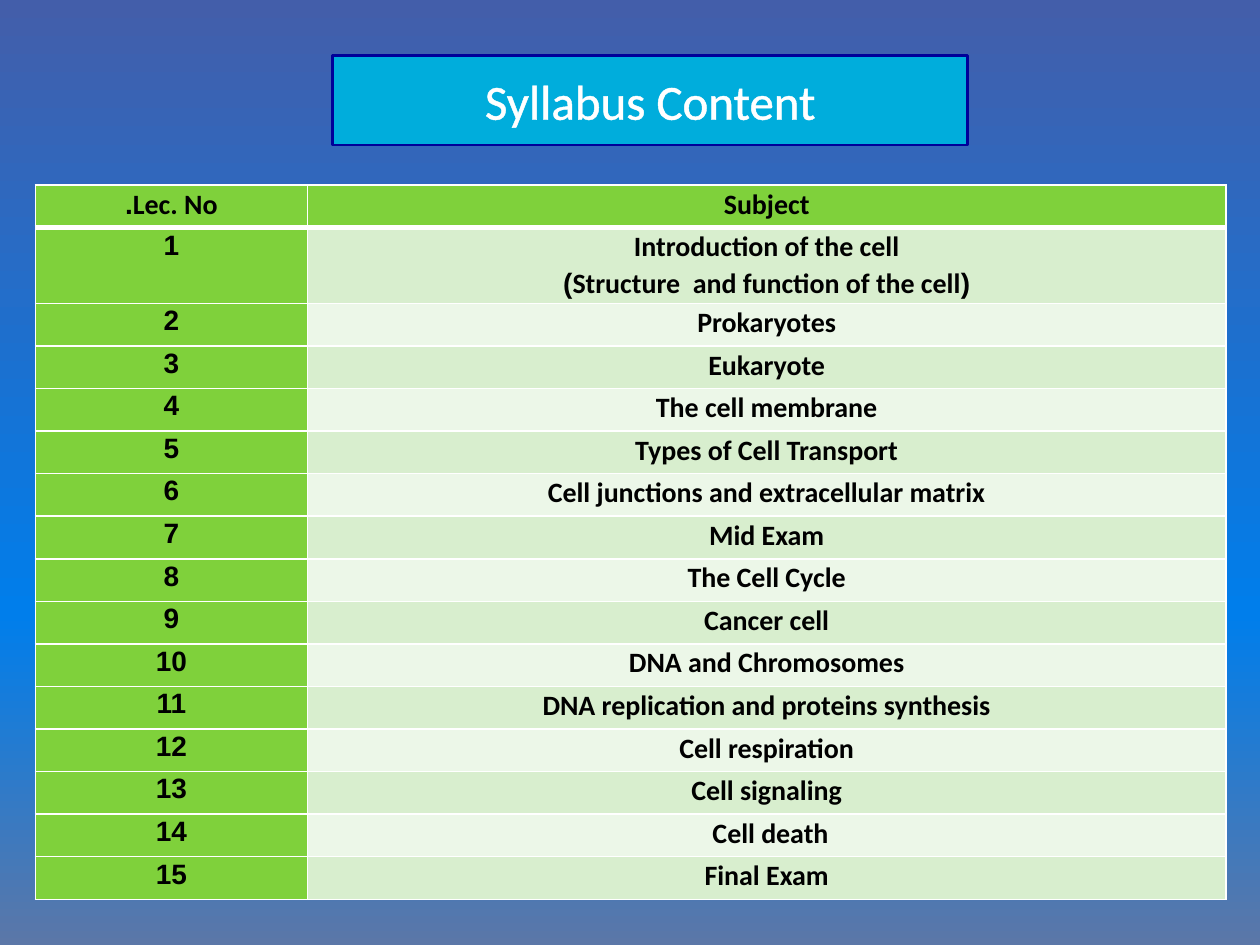
"""Build the syllabus slide: a title bar above a table of lectures."""
from copy import deepcopy

from lxml import etree
from pptx import Presentation
from pptx.dml.color import RGBColor
from pptx.enum.text import MSO_ANCHOR, MSO_AUTO_SIZE, PP_ALIGN
from pptx.oxml.ns import qn
from pptx.util import Inches, Pt

CENTER = PP_ALIGN.CENTER
MIDDLE = MSO_ANCHOR.MIDDLE
NO_AUTOFIT = MSO_AUTO_SIZE.NONE

WHITE = RGBColor(0xFF, 0xFF, 0xFF)
BLACK = RGBColor(0x00, 0x00, 0x00)
CYAN = RGBColor(0x00, 0xAD, 0xDC)
NAVY = RGBColor(0x00, 0x00, 0x99)
GREEN = RGBColor(0x7F, 0xD1, 0x3B)
BANDS = (RGBColor(0xEC, 0xF7, 0xE8), RGBColor(0xD8, 0xEE, 0xCE))
BACKGROUND_STOPS = (
    (0, RGBColor(0x43, 0x5E, 0xAA)),
    (0.65, RGBColor(0x00, 0x7E, 0xEB)),
    (1, RGBColor(0x5B, 0x77, 0xA8)),
)

HEADER = ("Lec. No.", "Subject")
SUBJECTS = (
    "Introduction of the cell\n(Structure  and function of the cell)",
    "Prokaryotes",
    "Eukaryote",
    "The cell membrane",
    "Types of Cell Transport",
    "Cell junctions and extracellular matrix",
    "Mid Exam",
    "The Cell Cycle",
    "Cancer cell",
    "DNA and Chromosomes",
    "DNA replication and proteins synthesis",
    "Cell respiration",
    "Cell signaling",
    "Cell death ",
    "Final Exam",
)


class SyllabusSlide:
    """Hold the style and the current slide."""

    title_font = {"name": "Calibri", "size": Pt(28), "bold": False}
    cell_font = {"name": "Calibri", "size": Pt(16), "bold": True}
    cell_paragraph = {"line_spacing": 1.07, "space_before": Pt(0)}
    cell_margins = {
        "margin_left": Inches(0.07),
        "margin_right": Inches(0.07),
        "margin_top": 0,
        "margin_bottom": 0,
    }

    def __init__(self, presentation):
        self.slide = presentation.slides.add_slide(presentation.slide_layouts[5])

    @staticmethod
    def apply(target, values):
        """Set each named attribute on the target."""
        for name, value in values.items():
            setattr(target, name, value)

    @staticmethod
    def line_element(tag, points):
        """Return a solid white line element."""
        line = etree.Element(qn(tag), w=str(Pt(points)))
        fill = etree.SubElement(line, qn("a:solidFill"))
        etree.SubElement(fill, qn("a:srgbClr"), val=str(WHITE))
        return line

    def background(self, stops):
        """Fill the background with a gradient from top to bottom."""
        fill = self.slide.background.fill
        fill.gradient()
        fill.gradient_angle = 270
        stop_list = self.slide.element.find(".//" + qn("a:gsLst"))
        stop_list.append(deepcopy(stop_list[-1]))
        for stop, (position, color) in zip(fill.gradient_stops, stops):
            stop.position = position
            stop.color.rgb = color

    def format_paragraph(self, paragraph, font, color):
        """Centre a right-to-left paragraph and format its runs."""
        paragraph.alignment = CENTER
        paragraph._p.get_or_add_pPr().set("rtl", "1")
        for run in paragraph.runs:
            self.apply(run.font, font)
            run.font.color.rgb = color

    def title(self, text, left, top, width, height):
        """Turn the title placeholder into a bordered bar."""
        shape = self.slide.shapes.title
        bounds = {"left": left, "top": top, "width": width, "height": height}
        self.apply(shape, {name: Inches(value) for name, value in bounds.items()})
        shape.fill.solid()
        shape.fill.fore_color.rgb = CYAN
        shape.line.color.rgb = NAVY
        shape.line.width = Pt(1.5)
        frame = shape.text_frame
        frame.text = text
        self.apply(frame, {"vertical_anchor": MIDDLE, "word_wrap": True,
                           "auto_size": NO_AUTOFIT})
        paragraph = frame.paragraphs[0]
        self.format_paragraph(paragraph, self.title_font, WHITE)
        properties = paragraph.runs[0].font._element
        properties.insert(0, self.line_element("a:ln", 1.45))

    def cell(self, cell, text, color, top_line, bottom_line, space_after):
        """Write and format one table cell."""
        cell.text = text
        self.apply(cell, self.cell_margins)
        cell.fill.solid()
        cell.fill.fore_color.rgb = color
        for paragraph in cell.text_frame.paragraphs:
            self.format_paragraph(paragraph, self.cell_font, BLACK)
            self.apply(paragraph, self.cell_paragraph)
            paragraph.space_after = Pt(space_after)
            for run in paragraph.runs:
                etree.SubElement(run.font._element, qn("a:cs"), typeface="Arial")
        borders = {"a:lnL": 1, "a:lnR": 1, "a:lnT": top_line, "a:lnB": bottom_line}
        properties = cell._tc.get_or_add_tcPr()
        for index, (tag, points) in enumerate(borders.items()):
            properties.insert(index, self.line_element(tag, points))

    def table(self, rows, left, top, column_widths, height, tall_height):
        """Add a table whose first body row is taller than the others."""
        frame = self.slide.shapes.add_table(
            len(rows), len(column_widths), Inches(left), Inches(top),
            Inches(sum(column_widths)), Inches(height))
        table = frame.table
        for column, width in zip(table.columns, column_widths):
            column.width = Inches(width)
        row_height = (height - tall_height) / (len(rows) - 1)
        for index, texts in enumerate(rows):
            table.rows[index].height = Inches(tall_height if index == 1 else row_height)
            is_header = index == 0
            colors = (GREEN, GREEN if is_header else BANDS[index % 2])
            for column, (text, color) in enumerate(zip(texts, colors)):
                self.cell(table.cell(index, column), text, color,
                          top_line=3 if index == 1 else 1,
                          bottom_line=3 if is_header else 1,
                          space_after=8 if is_header else 0)


def main():
    presentation = Presentation()
    presentation.slide_width = Inches(10)
    presentation.slide_height = Inches(7.5)
    syllabus = SyllabusSlide(presentation)
    syllabus.background(BACKGROUND_STOPS)
    syllabus.title("Syllabus Content", 2.64, 0.44, 5.04, 0.71)
    lectures = [(str(number), subject) for number, subject in enumerate(SUBJECTS, 1)]
    syllabus.table([HEADER, *lectures], 0.28, 1.47, (2.16, 7.29), 5.67, 0.6)
    presentation.save("out.pptx")


if __name__ == "__main__":
    main()
